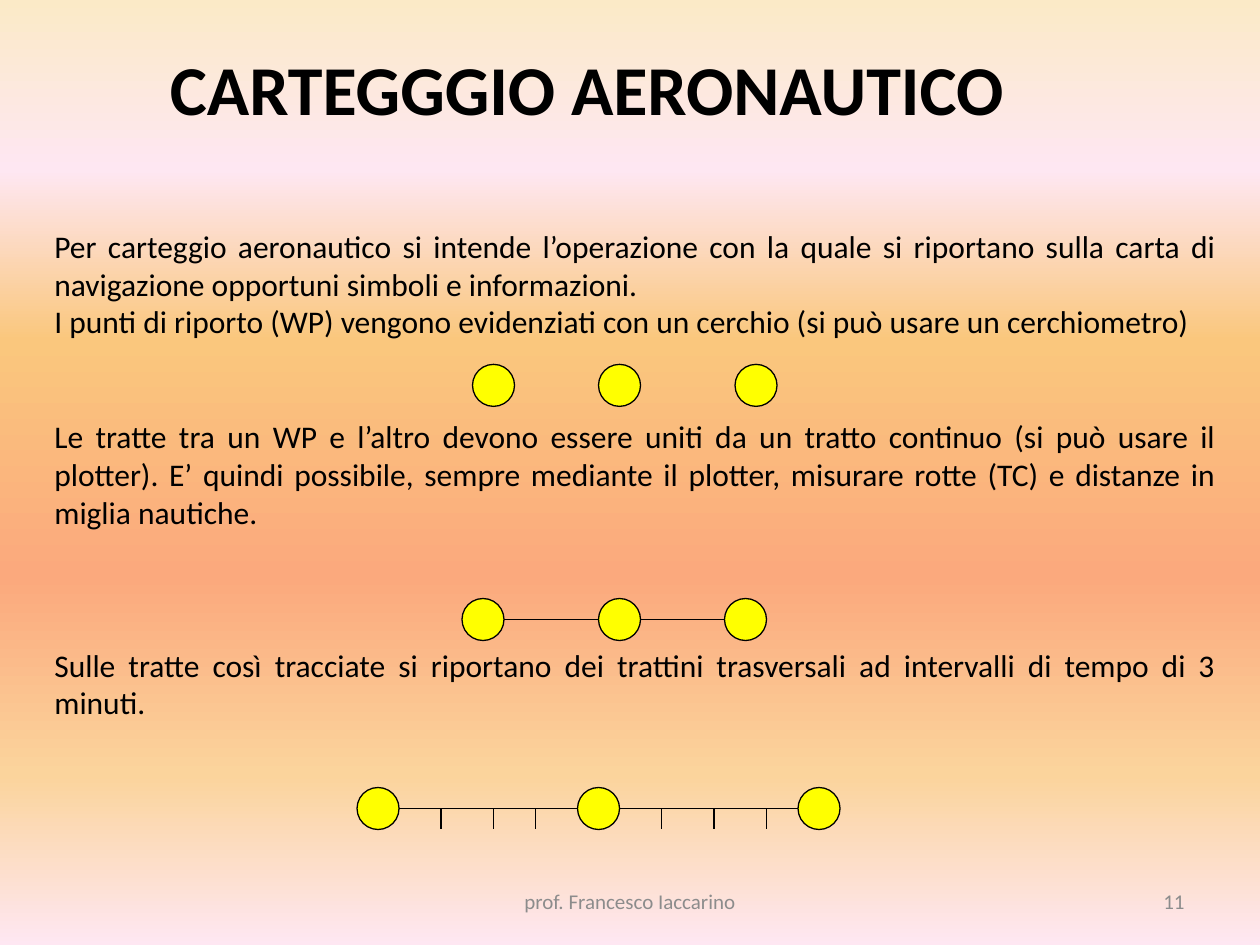
from lxml.etree import SubElement
from pptx import Presentation
from pptx.dml.color import RGBColor
from pptx.enum.shapes import MSO_CONNECTOR, MSO_SHAPE
from pptx.enum.text import MSO_ANCHOR, PP_ALIGN
from pptx.oxml.ns import qn
from pptx.util import Inches, Pt

THEME = {
    "font": "Calibri",
    "title_size": 40,
    "body_size": 18,
    "footer_size": 12,
    "line_width": 0.75,
    "ink": "000000",
    "muted": "8C8C8C",
    "waypoint": "FFFF00",
    "background": [(0, "FBEAC7"), (18, "FEE7F2"), (36, "FAC77D"),
                   (61, "FBA97D"), (82, "FBD49C"), (100, "FEE7F2")],
}

presentation = Presentation()
presentation.slide_width = Inches(10)
presentation.slide_height = Inches(7.5)
slide = presentation.slides.add_slide(presentation.slide_layouts[6])

# Grid of 120 columns by 90 rows
CELL = presentation.slide_width / 120
DIAMETER = 4
RADIUS = DIAMETER / 2


def add_text(box, paragraphs, size, color, alignment, anchor=MSO_ANCHOR.TOP, bold=False):
    """Add a text box; each paragraph is (text, blank lines left above it)."""
    shape = slide.shapes.add_textbox(*(round(value * CELL) for value in box))
    text_frame = shape.text_frame
    text_frame.word_wrap = True
    text_frame.vertical_anchor = anchor
    text_frame.text = "\n".join(text for text, _ in paragraphs)
    for paragraph, (_, gap) in zip(text_frame.paragraphs, paragraphs):
        paragraph.alignment = alignment
        paragraph.space_before = Pt(gap * size * 1.22)
        font = paragraph.runs[0].font
        font.name = THEME["font"]
        font.size = Pt(size)
        font.bold = bold
        font.color.rgb = RGBColor.from_string(color)


def add_line(x1, y1, x2, y2):
    connector = slide.shapes.add_connector(
        MSO_CONNECTOR.STRAIGHT, *(round(value * CELL) for value in (x1, y1, x2, y2)))
    connector.line.width = Pt(THEME["line_width"])
    connector.line.color.rgb = RGBColor.from_string(THEME["ink"])
    SubElement(connector._element.spPr, qn("a:effectLst"))


# Background gradient, running from top to bottom
background = slide.background.fill
background.gradient()
background.gradient_angle = 270
stop_list = slide.element.find(".//" + qn("a:gsLst"))
for stop in list(stop_list):
    stop_list.remove(stop)
for percent, color in THEME["background"]:
    stop = SubElement(stop_list, qn("a:gs"), pos=str(percent * 1000))
    SubElement(stop, qn("a:srgbClr"), val=color)

# Footer and slide number
for box, text, alignment in [
    ((41, 83.4, 38, 4.8), "prof. Francesco Iaccarino", PP_ALIGN.CENTER),
    ((86, 83.4, 28, 4.8), "11", PP_ALIGN.RIGHT),
]:
    add_text(box, [(text, 0)], THEME["footer_size"], THEME["muted"],
             alignment, MSO_ANCHOR.MIDDLE)

# Body text, with room for the diagrams between paragraphs
add_text((4, 21, 113, 57), [
    ("Per carteggio aeronautico si intende l’operazione con la quale si riportano "
     "sulla carta di navigazione opportuni simboli e informazioni.", 0),
    ("I punti di riporto (WP) vengono evidenziati con un cerchio "
     "(si può usare un cerchiometro)", 0),
    ("Le tratte tra un WP e l’altro devono essere uniti da un tratto continuo "
     "(si può usare il plotter). E’ quindi possibile, sempre mediante il plotter, "
     "misurare rotte (TC) e distanze in miglia nautiche.", 2),
    ("Sulle tratte così tracciate si riportano dei trattini trasversali "
     "ad intervalli di tempo di 3 minuti.", 3),
], THEME["body_size"], THEME["ink"], PP_ALIGN.JUSTIFY)

# Waypoint diagrams: top row, left columns of the circles, joined or not, tick columns
diagrams = [
    (34.7, (45, 57, 70), False, ()),
    (57, (44, 57, 69), True, ()),
    (75, (34, 55, 76), True, (42, 47, 51, 63, 68, 73)),
]
for top, columns, joined, ticks in diagrams:
    middle = top + RADIUS
    for column in columns:
        waypoint = slide.shapes.add_shape(
            MSO_SHAPE.OVAL, *(round(value * CELL) for value in (column, top, DIAMETER, DIAMETER)))
        waypoint.shadow.inherit = False
        waypoint.fill.solid()
        waypoint.fill.fore_color.rgb = RGBColor.from_string(THEME["waypoint"])
        waypoint.line.color.rgb = RGBColor.from_string(THEME["ink"])
        waypoint.line.width = Pt(THEME["line_width"])
    if joined:
        for start, end in zip(columns, columns[1:]):
            add_line(start + DIAMETER, middle, end, middle)
    for tick in ticks:
        add_line(tick, middle, tick, middle + RADIUS)

# Title
add_text((15, 3.7, 92.8, 9.3), [("CARTEGGGIO AERONAUTICO", 0)],
         THEME["title_size"], THEME["ink"], PP_ALIGN.LEFT, bold=True)

presentation.save("out.pptx")
